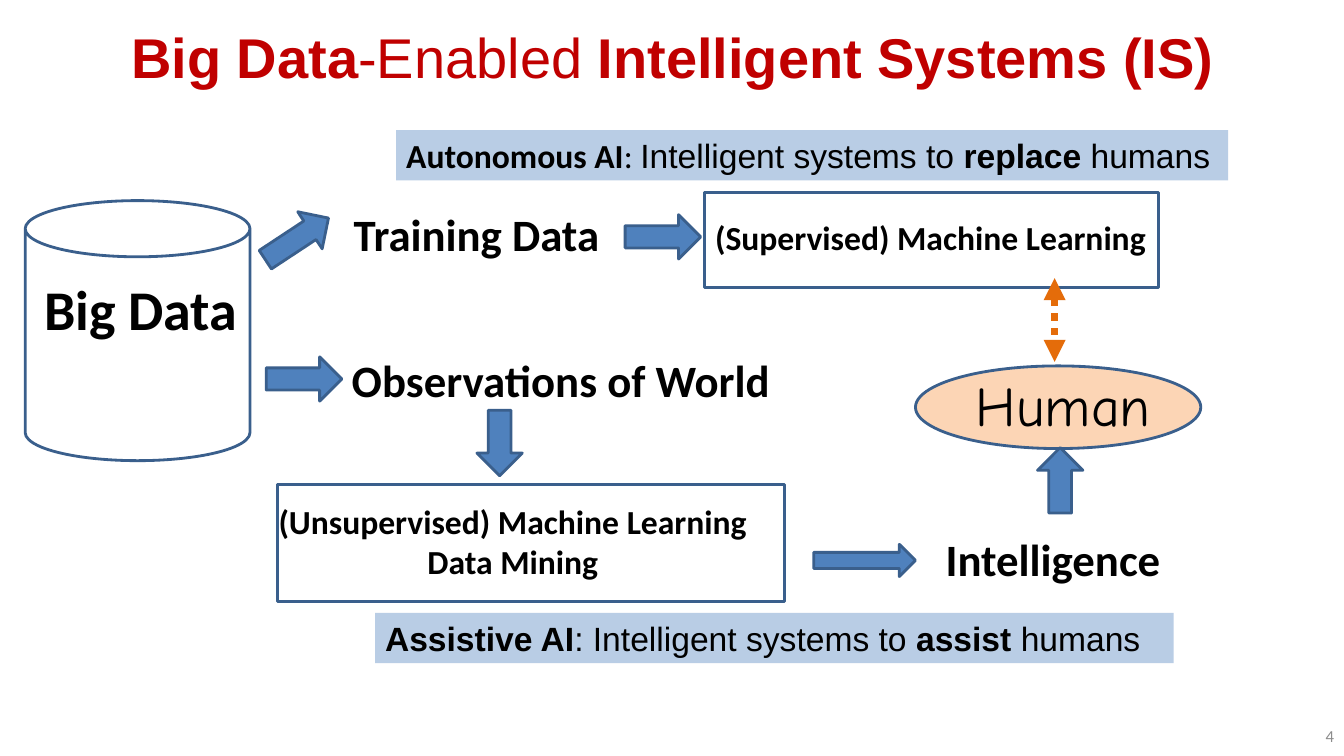
from lxml.etree import SubElement
from pptx import Presentation
from pptx.dml.color import RGBColor
from pptx.enum.shapes import MSO_CONNECTOR, MSO_SHAPE
from pptx.enum.text import MSO_ANCHOR, PP_ALIGN
from pptx.oxml.ns import qn
from pptx.util import Pt

PX = 9144  # EMU in one px, 100 px to the inch
BLUE, EDGE, PALE, PEACH = "4F81BD", "3A5F8C", "B9CDE5", "FCD5B5"
WHITE, BLACK, RED, ORANGE, GREY = "FFFFFF", "000000", "C00000", "E46C0A", "8C8C8C"
LEFT, MID, RIGHT = PP_ALIGN.LEFT, PP_ALIGN.CENTER, PP_ALIGN.RIGHT
BOLD = {"bold": True}
PLAIN = {"bold": False}
ARIAL = {"name": "Arial"}


def color(hex):
    return RGBColor.from_string(hex)


def emu(*nums):
    return [n * PX for n in nums]


# Basic parts
def write(frame, lines, size, ink=BLACK, align=LEFT, wrap=False,
          anchor=MSO_ANCHOR.TOP):
    """Fill a frame; each line is a list of (words, format) runs."""
    frame.word_wrap = wrap
    frame.vertical_anchor = anchor
    for i, line in enumerate(lines):
        para = frame.paragraphs[0] if i == 0 else frame.add_paragraph()
        para.alignment = align
        for words, form in line:
            run = para.add_run()
            run.text = words
            look = {"name": "Calibri", "size": Pt(size), **form}
            for key, val in look.items():
                setattr(run.font, key, val)
            run.font.color.rgb = color(ink)


def label(slide, box, lines, size, **form):
    text = slide.shapes.add_textbox(*emu(*box))
    write(text.text_frame, lines, size, **form)


def shape(slide, kind, box, fill, edge=EDGE, turn=0):
    item = slide.shapes.add_shape(kind, *emu(*box))
    item.shadow.inherit = False
    item.rotation = turn
    item.fill.solid()
    item.fill.fore_color.rgb = color(fill)
    if edge:
        item.line.color.rgb = color(edge)
        item.line.width = Pt(2)
    else:
        item.line.fill.background()
    return item


def arrow(slide, box, turn=0):
    shape(slide, MSO_SHAPE.RIGHT_ARROW, box, BLUE, turn=turn)


def link(slide, x, top, end):
    """Dotted vertical line with a head at both ends."""
    line = slide.shapes.add_connector(
        MSO_CONNECTOR.STRAIGHT, *emu(x, top, x, end))
    line.line.color.rgb = color(ORANGE)
    line.line.width = Pt(5.25)
    props = line.line._get_or_add_ln()
    SubElement(props, qn("a:prstDash"), val="sysDot")
    for tag in ("a:headEnd", "a:tailEnd"):
        SubElement(props, qn(tag), type="triangle")
    SubElement(line._element.spPr, qn("a:effectLst"))


# Regions of the slide
def heading(slide, box):
    title = slide.shapes.title
    for key, val in zip(("left", "top", "width", "height"), emu(*box)):
        setattr(title, key, val)
    runs = [("Big Data", BOLD), ("-Enabled ", PLAIN),
            ("Intelligent Systems (IS)", BOLD)]
    write(title.text_frame, [[(words, ARIAL | form) for words, form in runs]],
          40, RED, MID, True, MSO_ANCHOR.MIDDLE)


def store(slide, box):
    x, y, w, h = box
    shape(slide, MSO_SHAPE.CAN, box, WHITE)
    label(slide, (x + 9, y + 68, w - 9, 77), [[("Big Data", BOLD)]], 40)


def train(slide, box):
    x, y, w, h = box
    arrow(slide, (x, y + 24, 75, 44), 326.6)
    label(slide, (x + 84, y + 9, 276, 64), [[("Training Data", BOLD)]], 32)
    arrow(slide, (x + 363, y + 22, 75, 44))
    shape(slide, MSO_SHAPE.RECTANGLE, (x + w - 450, y, 450, h), WHITE)
    label(slide, (x + w - 488, y + 19, 524, 50),
          [[("(Supervised) Machine Learning", BOLD)]], 24,
          align=MID, wrap=True)


def observe(slide, box):
    x, y, w, h = box
    arrow(slide, (x, y + 9, 75, 44))
    label(slide, (x + 75, y, w - 75, h),
          [[("Observations of World", BOLD)]], 32)


def mine(slide, box):
    x, y, w, h = box
    arrow(slide, (x + 188, y - 64, 65, 45), 90)
    shape(slide, MSO_SHAPE.RECTANGLE, (x, y, 503, h), WHITE)
    label(slide, (x - 11, y + 11, 489, 91),
          [[("(Unsupervised) Machine Learning", BOLD)],
           [("Data Mining", BOLD)]], 24, align=MID)
    arrow(slide, (x + 532, y + 59, 101, 32))
    label(slide, (x + w - 235, y + 42, 235, 64),
          [[("Intelligence", BOLD)]], 32)


def human(slide, box):
    x, y, w, h = box
    shape(slide, MSO_SHAPE.OVAL, box, PEACH)
    label(slide, (x + 50, y, 196, 77),
          [[("Human", {"name": "Comic Neue"})]], 40)
    link(slide, x + 138, y - 87, y - 4)
    arrow(slide, (x + 111, y + h + 9, 65, 45), 270)


def banner(slide, box, runs, wrap=False):
    bar = shape(slide, MSO_SHAPE.RECTANGLE, box, PALE, edge=None)
    write(bar.text_frame, [runs], 24, wrap=wrap)


def number(slide, box):
    label(slide, box, [[("4", {})]], 12, ink=GREY, align=RIGHT, wrap=True,
          anchor=MSO_ANCHOR.MIDDLE)


def main():
    deck = Presentation()
    deck.slide_width, deck.slide_height = emu(1333, 750)
    slide = deck.slides.add_slide(deck.slide_layouts[5])
    heading(slide, (92, -7, 1150, 125))
    store(slide, (25, 199, 223, 258))
    train(slide, (257, 191, 892, 94))
    banner(slide, (393, 129, 825, 50), [
        ("Autonomous AI", BOLD), (": ", PLAIN),
        ("Intelligent systems to ", ARIAL), ("replace", ARIAL | BOLD),
        (" humans", ARIAL)])
    observe(slide, (264, 345, 514, 64))
    mine(slide, (275, 481, 888, 116))
    human(slide, (908, 363, 283, 82))
    banner(slide, (372, 608, 792, 50), [
        ("Assistive AI", ARIAL | BOLD), (": Intelligent systems to ", ARIAL),
        ("assist ", ARIAL | BOLD), ("humans", ARIAL)], wrap=True)
    number(slide, (1022, 710, 311, 40))
    deck.save("out.pptx")


if __name__ == "__main__":
    main()
